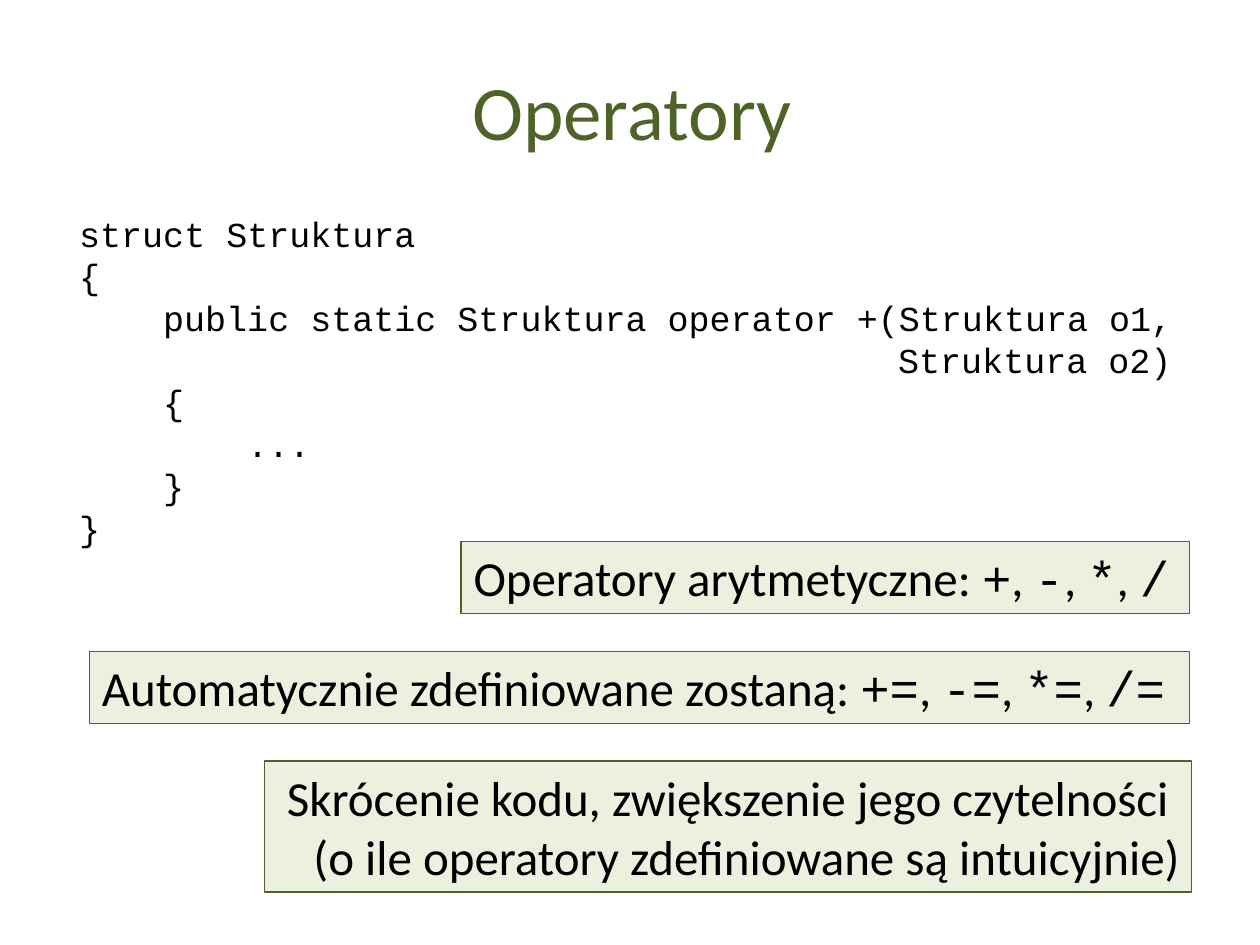
from pptx import Presentation
from pptx.dml.color import RGBColor
from pptx.enum.shapes import MSO_SHAPE
from pptx.enum.text import MSO_ANCHOR, MSO_AUTO_SIZE, PP_ALIGN
from pptx.util import Inches, Pt

COLORS = {"accent": "4F6228", "panel": "EBF1DE", "text": "000000"}
TEXT_FONT = "Calibri"
CODE_FONT = "Courier New"
CODE_SIZE = 20
CODE_CHARACTER = 0.6 * CODE_SIZE / 72  # advance width of Courier New, in inches

CODE_LINES = [  # (indent in characters, text)
    (0, "struct Struktura"),
    (0, "{"),
    (4, "public static Struktura operator +(Struktura o1,"),
    (39, "Struktura o2)"),
    (4, "{"),
    (8, "..."),
    (4, "}"),
    (0, "}"),
]


class SlideBuilder:
    """Holds the text styles and the slide being filled."""

    styles = {
        "title": {"name": TEXT_FONT, "size": Pt(44), "color": "accent"},
        "code": {"name": CODE_FONT, "size": Pt(CODE_SIZE), "color": "text"},
        "note": {"name": TEXT_FONT, "size": Pt(28), "color": "text"},
        "symbol": {"name": CODE_FONT, "size": Pt(28), "color": "text"},
    }

    def __init__(self, slide):
        self.slide = slide

    def color(self, name):
        return RGBColor.from_string(COLORS[name])

    def add_run(self, paragraph, text, style):
        run = paragraph.add_run()
        run.text = text
        for attribute, value in self.styles[style].items():
            if attribute == "color":
                run.font.color.rgb = self.color(value)
            else:
                setattr(run.font, attribute, value)

    def fill_text(self, shape, lines, alignment=PP_ALIGN.LEFT, **frame_format):
        """Write lines, each a list of (text, style) runs; return the paragraphs."""
        frame = shape.text_frame
        defaults = {"word_wrap": True, "vertical_anchor": MSO_ANCHOR.TOP}
        for attribute, value in {**defaults, **frame_format}.items():
            setattr(frame, attribute, value)
        paragraphs = []
        for index, runs in enumerate(lines):
            paragraph = frame.add_paragraph() if index else frame.paragraphs[0]
            paragraph.alignment = alignment
            for text, style in runs:
                self.add_run(paragraph, text, style)
            paragraphs.append(paragraph)
        return paragraphs

    def add_title(self, text, *box):
        shape = self.slide.shapes.add_textbox(*map(Inches, box))
        self.fill_text(
            shape, [[(text, "title")]], PP_ALIGN.CENTER, vertical_anchor=MSO_ANCHOR.MIDDLE
        )

    def add_code(self, code_lines, *box):
        shape = self.slide.shapes.add_textbox(*map(Inches, box))
        paragraphs = self.fill_text(shape, [[(text, "code")] for _, text in code_lines])
        for paragraph, (indent, _) in zip(paragraphs, code_lines):
            margin = Inches(indent * CODE_CHARACTER)
            paragraph._p.get_or_add_pPr().set("marL", str(int(margin)))

    def add_note(self, lines, *box, alignment=PP_ALIGN.LEFT):
        shape = self.slide.shapes.add_shape(MSO_SHAPE.RECTANGLE, *map(Inches, box))
        shape.shadow.inherit = False
        shape.fill.solid()
        shape.fill.fore_color.rgb = self.color("panel")
        shape.line.color.rgb = self.color("accent")
        shape.line.width = Pt(0.75)
        self.fill_text(
            shape, lines, alignment,
            word_wrap=False, auto_size=MSO_AUTO_SIZE.SHAPE_TO_FIT_TEXT,
        )


def operator_list(label, symbols):
    """Return the runs of a label followed by comma-separated code symbols."""
    runs = [(label, "note")]
    for index, symbol in enumerate(symbols):
        if index:
            runs.append((", ", "note"))
        runs.append((symbol, "symbol"))
    return runs


def main():
    presentation = Presentation()
    presentation.slide_width = Inches(10)
    presentation.slide_height = Inches(7.5)
    slide = presentation.slides.add_slide(presentation.slide_layouts[6])
    builder = SlideBuilder(slide)

    operators = ["+", "-", "*", "/"]
    assignments = [operator + "=" for operator in operators]

    builder.add_title("Operatory", 0.19, 0.51, 9.65, 0.72)
    builder.add_code(CODE_LINES, 0.53, 1.64, 9.12, 2.79)
    builder.add_note(
        [operator_list("Operatory arytmetyczne: ", operators)], 3.66, 4.3, 5.78, 0.57
    )
    builder.add_note(
        [operator_list("Automatycznie zdefiniowane zostaną: ", assignments)],
        0.71, 5.17, 8.73, 0.57,
    )
    builder.add_note(
        [
            [("Skrócenie kodu, zwiększenie jego czytelności ", "note")],
            [("(o ile operatory zdefiniowane są intuicyjnie)", "note")],
        ],
        2.1, 6.04, 7.36, 1.04,
        alignment=PP_ALIGN.RIGHT,
    )
    presentation.save("out.pptx")


if __name__ == "__main__":
    main()
